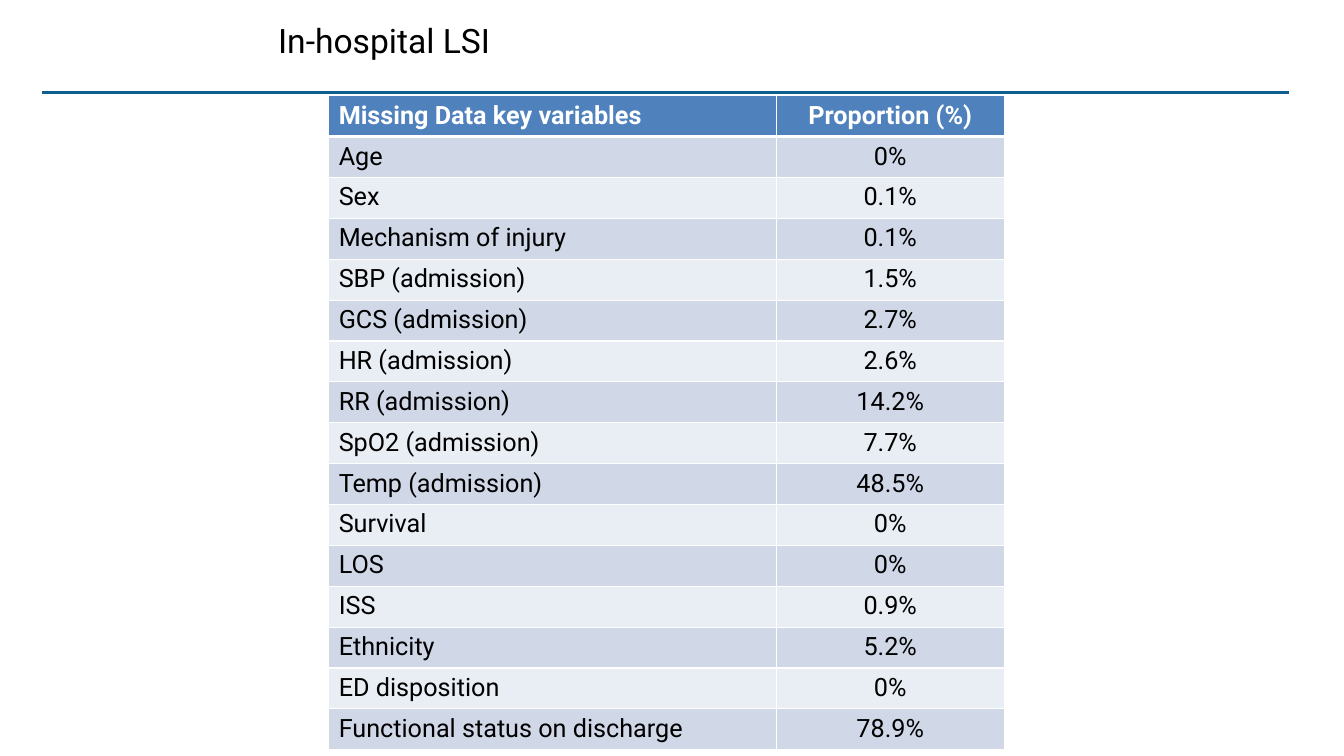
import pptx
import pptx.util
import pptx.dml.color
import pptx.enum.shapes
import pptx.enum.text
import pptx.oxml
import pptx.oxml.ns

Inches, Pt = pptx.util.Inches, pptx.util.Pt
RGB = pptx.dml.color.RGBColor
ALIGN = pptx.enum.text.PP_ALIGN

TITLE = "In-hospital LSI"
HEAD = ("Missing Data key variables", "Proportion (%)")
ROWS = [
    ("Age", "0%"),
    ("Sex", "0.1%"),
    ("Mechanism of injury", "0.1%"),
    ("SBP (admission)", "1.5%"),
    ("GCS (admission)", "2.7%"),
    ("HR (admission)", "2.6%"),
    ("RR (admission)", "14.2%"),
    ("SpO2 (admission)", "7.7%"),
    ("Temp (admission)", "48.5%"),
    ("Survival", "0%"),
    ("LOS", "0%"),
    ("ISS", "0.9%"),
    ("Ethnicity", "5.2%"),
    ("ED disposition", "0%"),
    ("Functional status on discharge", "78.9%"),
]

FONT = "Roboto"
BLACK = RGB(0, 0, 0)
WHITE = RGB(255, 255, 255)
RULE = RGB(0x0F, 0x5E, 0x90)
BLUE = RGB(0x4F, 0x81, 0xBD)
BANDS = (RGB(0xE9, 0xED, 0xF4), RGB(0xD0, 0xD8, 0xE8))

WIDE, HIGH = 13.33, 7.5
EDGE, RULE_Y = 0.42, 0.92
TABLE_X, TABLE_Y, TABLE_H = 3.26, 0.95, 6.49
COLS = (4.44, 2.26)


def write(frame, text, size, color, bold=False, align=ALIGN.LEFT):
    para = frame.paragraphs[0]
    para.alignment = align
    run = para.add_run()
    run.text = text
    run.font.name = FONT
    run.font.size = Pt(size)
    run.font.bold = bold
    run.font.color.rgb = color


def border(cell, top, bottom):
    """Draw white cell edges; top and bottom are widths in points."""
    props = cell._tc.get_or_add_tcPr()
    for side, width in (("L", 1), ("R", 1), ("T", top), ("B", bottom)):
        props.append(pptx.oxml.parse_xml(
            f'<a:ln{side} {pptx.oxml.ns.nsdecls("a")} w="{Pt(width)}">'
            f'<a:solidFill><a:srgbClr val="{WHITE}"/></a:solidFill>'
            f'</a:ln{side}>'))


def add_rule(slide):
    line = slide.shapes.add_connector(
        pptx.enum.shapes.MSO_CONNECTOR.STRAIGHT,
        Inches(EDGE), Inches(RULE_Y), Inches(12.78), Inches(RULE_Y))
    line.line.color.rgb = RULE
    line.line.width = Pt(1.75)
    line._element.spPr.append(pptx.oxml.parse_xml(
        f'<a:effectLst {pptx.oxml.ns.nsdecls("a")}/>'))


def add_title(slide):
    box = slide.shapes.add_textbox(
        Inches(2.66), Inches(0.07), Inches(7.11), Inches(0.66))
    frame = box.text_frame
    frame.word_wrap = True
    frame.vertical_anchor = pptx.enum.text.MSO_ANCHOR.MIDDLE
    write(frame, TITLE, 24, BLACK)


def add_data(slide):
    lines = [HEAD] + ROWS
    table = slide.shapes.add_table(
        len(lines), len(COLS), Inches(TABLE_X), Inches(TABLE_Y),
        Inches(sum(COLS)), Inches(TABLE_H)).table
    for col, width in zip(table.columns, COLS):
        col.width = Inches(width)
    for r, line in enumerate(lines):
        table.rows[r].height = Inches(TABLE_H / len(lines))
        head = r == 0
        for c, text in enumerate(line):
            cell = table.cell(r, c)
            border(cell, 3 if r == 1 else 1, 3 if head else 1)
            cell.fill.solid()
            cell.fill.fore_color.rgb = BLUE if head else BANDS[r % 2]
            write(cell.text_frame, text, 18, WHITE if head else BLACK,
                  head, ALIGN.CENTER if c else ALIGN.LEFT)


def main():
    deck = pptx.Presentation()
    deck.slide_width, deck.slide_height = Inches(WIDE), Inches(HIGH)
    slide = deck.slides.add_slide(deck.slide_layouts[6])
    add_rule(slide)
    add_title(slide)
    add_data(slide)
    deck.save("out.pptx")


if __name__ == "__main__":
    main()
